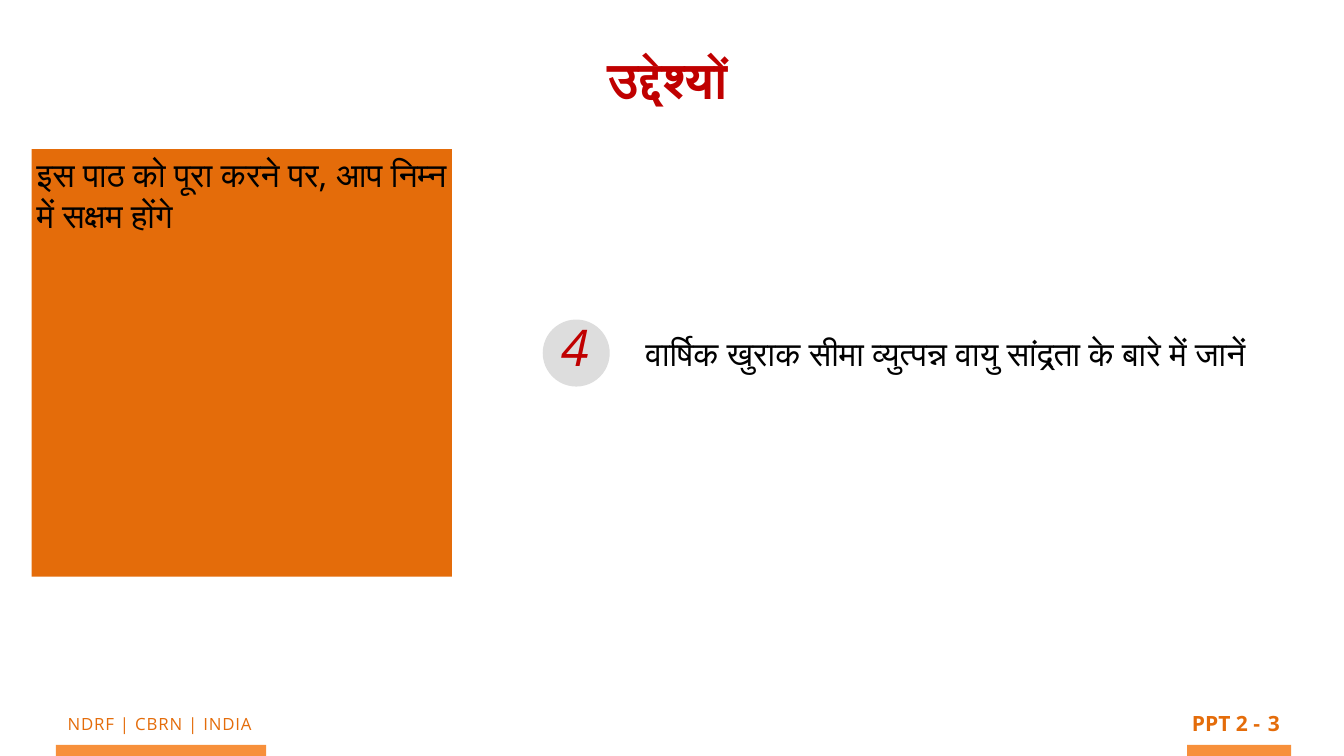
from pptx import Presentation
from pptx.dml.color import RGBColor
from pptx.enum.shapes import MSO_SHAPE as Shape
from pptx.enum.text import MSO_ANCHOR as Anchor, PP_ALIGN as Align
from pptx.util import Inches, Pt

COLORS = {"orange": "E46C0A", "bar": "F7903B", "red": "C00000",
          "black": "000000", "gray": "DDDDDD"}
FONT = "Open Sans"

# Content: text, position (left, top, width, height), format
FOOTER = [
    ("NDRF | CBRN | INDIA", (0.63, 14.08, 5.08, 0.58), dict(size=24, spacing=1.2)),
    ("PPT 2 -", (23.56, 14.01, 1.54, 0.68), dict(size=30, bold=True, wrap=False)),
    ("3", (25.07, 14.01, 0.42, 0.74), dict(size=30, bold=True)),
]
FOOTER_BARS = [(1.11, 14.78, 4.17, 0.22), (23.56, 14.78, 2.06, 0.22)]
TITLE = "उद्देश्यों"
INTRO = "इस पाठ को पूरा करने पर, आप निम्न में सक्षम होंगे"
OBJECTIVE_NUMBER = "4"
OBJECTIVE = "वार्षिक खुराक सीमा व्युत्पन्न वायु सांद्रता के बारे में जानें"


def add_block(shapes, kind, place, color):
    block = shapes.add_shape(kind, *map(Inches, place))
    block.shadow.inherit = False
    block.fill.solid()
    block.fill.fore_color.rgb = RGBColor.from_string(COLORS[color])
    block.line.fill.background()
    return block


def write(box, text, size, color="black", align=Align.LEFT, bold=False,
          italic=False, wrap=True, spacing=0, inset=0.09):
    frame = box.text_frame
    frame.word_wrap = wrap
    frame.vertical_anchor = Anchor.TOP
    frame.margin_left = frame.margin_right = Inches(inset)
    frame.margin_top = frame.margin_bottom = Inches(inset)
    para = frame.paragraphs[0]
    para.alignment = align
    span = para.add_run()
    span.text = text
    span.font.name = FONT
    span.font.size = Pt(size)
    span.font.bold = bold
    span.font.italic = italic
    span.font.color.rgb = RGBColor.from_string(COLORS[color])
    if spacing:
        span.font._element.set("spc", str(round(spacing * 100)))


def add_text(shapes, text, place, **style):
    write(shapes.add_textbox(*map(Inches, place)), text, **style)


deck = Presentation()
deck.slide_width, deck.slide_height = Inches(26.67), Inches(15)
page = deck.slides.add_slide(deck.slide_layouts[6])

# Footer
for place in FOOTER_BARS:
    add_block(page.shapes, Shape.RECTANGLE, place, "bar")
for text, place, style in FOOTER:
    add_text(page.shapes, text, place, color="orange", align=Align.CENTER, **style)

# Introduction panel and title
panel = add_block(page.shapes, Shape.RECTANGLE, (0.63, 2.96, 8.34, 8.48), "orange")
write(panel, INTRO, size=48, inset=0.1)
add_text(page.shapes, TITLE, (9.47, 0.86, 7.56, 1.38), size=72, color="red",
         align=Align.CENTER, bold=True)

# Numbered objective
add_text(page.shapes, OBJECTIVE, (12.72, 6.52, 12.77, 1.79), size=48)
badge = page.shapes.add_group_shape()
add_block(badge.shapes, Shape.OVAL, (10.77, 6.34, 1.33, 1.33), "gray")
add_text(badge.shapes, OBJECTIVE_NUMBER, (11.04, 6.18, 0.9, 1.84), size=72,
         color="red", italic=True)

deck.save("out.pptx")
